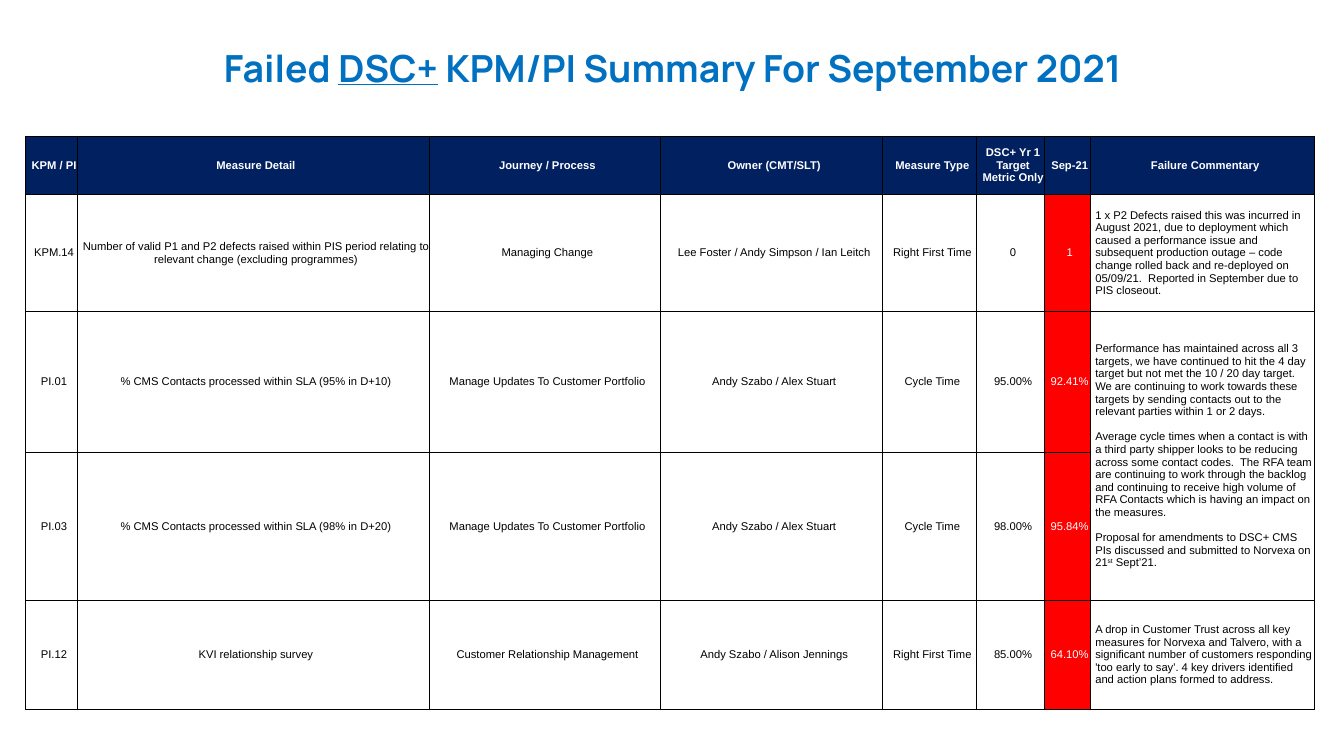
from typing import NamedTuple

from lxml.etree import SubElement
from pptx import Presentation
from pptx.dml.color import RGBColor
from pptx.enum.text import MSO_ANCHOR, PP_ALIGN
from pptx.oxml.ns import qn
from pptx.util import Cm, Pt

NAVY, RED, BLUE = "002060", "FF0000", "0070C0"
WHITE, BLACK = "FFFFFF", "000000"


class Measure(NamedTuple):
    code: str
    detail: str
    journey: str
    owner: str
    kind: str
    target: str
    result: str
    commentary: tuple[str, ...] = ()


HEADINGS = ("KPM / PI", "Measure Detail", "Journey / Process", "Owner (CMT/SLT)",
            "Measure Type", "DSC+ Yr 1 Target Metric Only", "Sep-21",
            "Failure Commentary")
COLUMN_WIDTHS = (0.98, 6.65, 4.37, 4.2, 1.78, 1.27, 0.87, 4.25)
ROW_HEIGHTS = (1.11, 2.21, 2.66, 2.8, 2.06)
RESULT_COLUMN, COMMENTARY_COLUMN = 6, 7

# A caret pair encloses superscript text
MEASURES = (
    Measure("KPM.14",
            "Number of valid P1 and P2 defects raised within PIS period relating to "
            "relevant change (excluding programmes)",
            "Managing Change", "Lee Foster / Andy Simpson / Ian Leitch",
            "Right First Time", "0", "1",
            ("1 x P2 Defects raised this was incurred in August 2021, due to deployment "
             "which caused a performance issue and subsequent production outage – code "
             "change rolled back and re-deployed on 05/09/21.  Reported in September due "
             "to PIS closeout.",)),
    Measure("PI.01", "% CMS Contacts processed within SLA (95% in D+10)",
            "Manage Updates To Customer Portfolio", "Andy Szabo / Alex Stuart",
            "Cycle Time", "95.00%", "92.41%",
            ("Performance has maintained across all 3 targets, we have continued to hit "
             "the 4 day target but not met the 10 / 20 day target.  We are continuing to "
             "work towards these targets by sending contacts out to the relevant parties "
             "within 1 or 2 days.",
             "Average cycle times when a contact is with a third party shipper looks to be "
             "reducing across some contact codes.  The RFA team are continuing to work "
             "through the backlog and continuing to receive high volume of RFA Contacts "
             "which is having an impact on the measures.",
             "Proposal for amendments to DSC+ CMS PIs discussed and submitted to Norvexa "
             "on 21^st^ Sept’21.")),
    Measure("PI.03", "% CMS Contacts processed within SLA (98% in D+20)",
            "Manage Updates To Customer Portfolio", "Andy Szabo / Alex Stuart",
            "Cycle Time", "98.00%", "95.84%"),
    Measure("PI.12", "KVI relationship survey", "Customer Relationship Management",
            "Andy Szabo / Alison Jennings", "Right First Time", "85.00%", "64.10%",
            ("A drop in Customer Trust across all key measures for Norvexa and Talvero, "
             "with a significant number of customers responding 'too early to say'. 4 key "
             "drivers identified and action plans formed to address.",)),
)


def colour(value: str) -> RGBColor:
    return RGBColor.from_string(value)


def add_span(para, text: str, font: str, size: float, ink: str, bold: bool = False):
    span = para.add_run()
    span.text = text
    span.font.name = font
    span.font.size = Pt(size)
    span.font.bold = bold
    span.font.color.rgb = colour(ink)
    return span


def format_cell(cell, fill: str | None) -> None:
    cell.margin_left = Cm(0.1)
    cell.margin_top = cell.margin_right = cell.margin_bottom = 0
    cell.vertical_anchor = MSO_ANCHOR.MIDDLE
    properties = cell._tc.get_or_add_tcPr()
    for side in ("a:lnL", "a:lnR", "a:lnT", "a:lnB"):
        line = SubElement(properties, qn(side), w=str(Pt(0.5)))
        SubElement(SubElement(line, qn("a:solidFill")), qn("a:srgbClr"), val=BLACK)
    if fill:
        cell.fill.solid()
        cell.fill.fore_color.rgb = colour(fill)
    else:
        cell.fill.background()


def write_cell(cell, paragraphs: tuple[str, ...], ink: str = BLACK,
               bold: bool = False, align: PP_ALIGN = PP_ALIGN.CENTER) -> None:
    frame = cell.text_frame
    for index, text in enumerate(paragraphs):
        para = frame.add_paragraph() if index else frame.paragraphs[0]
        para.alignment = align
        if index:
            para.space_before = Pt(6.8)
        for part, piece in enumerate(text.split("^")):
            span = add_span(para, piece, "Arial", 6, ink, bold)
            if part % 2:
                span.font._element.set("baseline", "30000")


def add_title(page) -> None:
    title = page.shapes.title
    title.left, title.top, title.width, title.height = (
        Cm(0.03), Cm(0.71), Cm(25.37), Cm(1.12))
    para = title.text_frame.paragraphs[0]
    para.alignment = PP_ALIGN.CENTER
    for text in ("Failed ", "DSC+", " KPM/PI Summary For September 2021"):
        span = add_span(para, text, "Manrope", 20, BLUE, bold=True)
        span.font.underline = text == "DSC+"


def add_measures(page) -> None:
    table = page.shapes.add_table(
        len(ROW_HEIGHTS), len(COLUMN_WIDTHS), Cm(0.48), Cm(2.57),
        Cm(sum(COLUMN_WIDTHS)), Cm(sum(ROW_HEIGHTS))).table
    for column, width in zip(table.columns, COLUMN_WIDTHS):
        column.width = Cm(width)
    for row, height in zip(table.rows, ROW_HEIGHTS):
        row.height = Cm(height)

    # Header row
    for column, heading in enumerate(HEADINGS):
        cell = table.cell(0, column)
        format_cell(cell, NAVY)
        write_cell(cell, (heading,), WHITE, bold=True)

    # One row per failed measure
    for row, measure in enumerate(MEASURES, start=1):
        for column, value in enumerate(measure):
            cell = table.cell(row, column)
            failed = column == RESULT_COLUMN
            format_cell(cell, RED if failed else None)
            if column == COMMENTARY_COLUMN:
                write_cell(cell, value, align=PP_ALIGN.LEFT)
            else:
                write_cell(cell, (value,), WHITE if failed else BLACK)

    # PI.01 and PI.03 share one commentary
    table.cell(2, COMMENTARY_COLUMN).merge(table.cell(3, COMMENTARY_COLUMN))


def main() -> None:
    deck = Presentation()
    deck.slide_width, deck.slide_height = Cm(25.4), Cm(14.29)
    page = deck.slides.add_slide(deck.slide_layouts[5])
    add_title(page)
    add_measures(page)
    deck.save("out.pptx")


if __name__ == "__main__":
    main()
